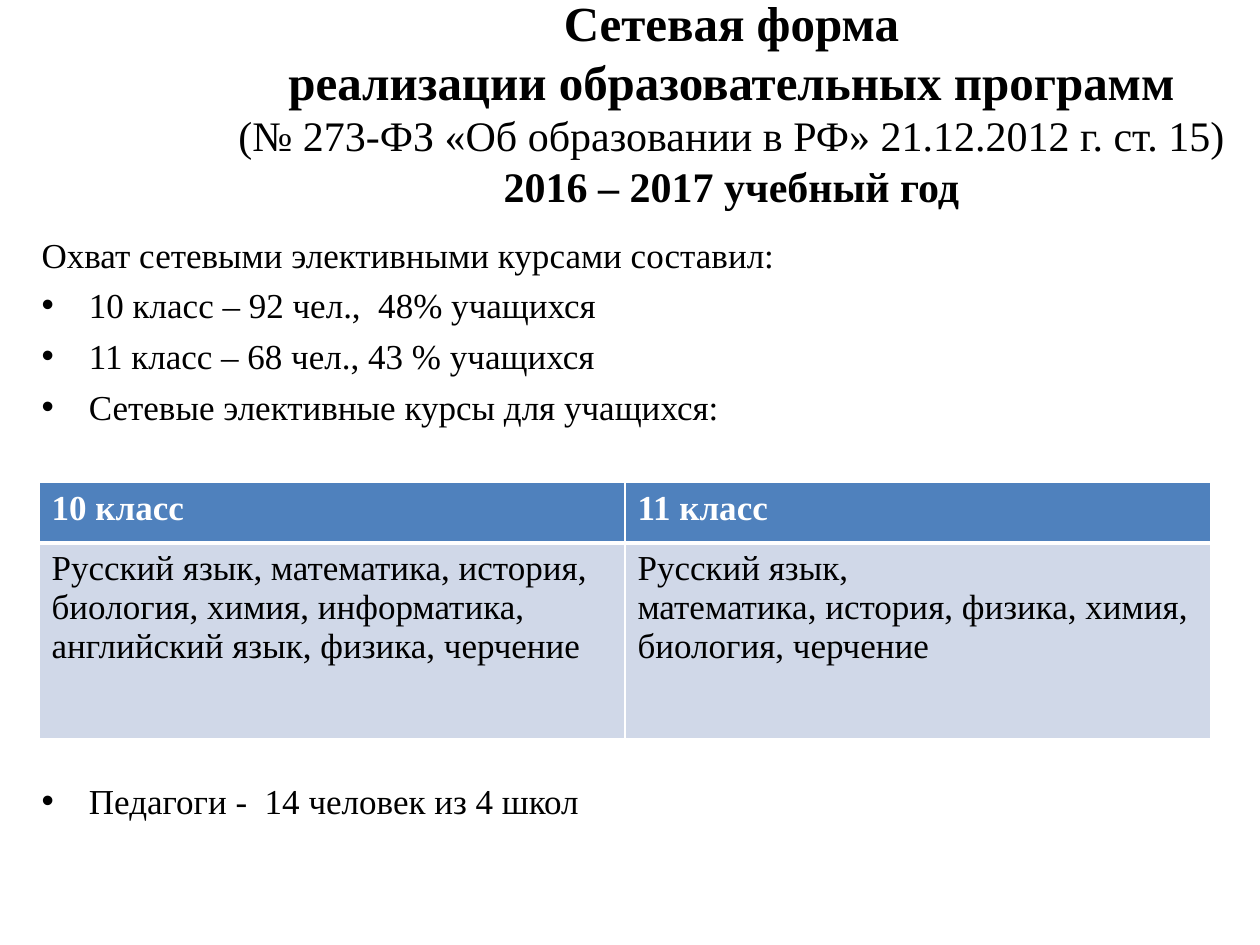
"""Build a slide on networked elective courses with a title, a list and a table."""
import lxml.etree
import pptx
import pptx.dml.color
import pptx.enum.text
import pptx.oxml.ns
import pptx.util

Inches = pptx.util.Inches
Pt = pptx.util.Pt
RGBColor = pptx.dml.color.RGBColor
qn = pptx.oxml.ns.qn

BLACK = RGBColor(0x00, 0x00, 0x00)
WHITE = RGBColor(0xFF, 0xFF, 0xFF)
HEADER_BLUE = RGBColor(0x4F, 0x81, 0xBD)
CELL_BLUE = RGBColor(0xD0, 0xD8, 0xE8)
FONT = "Times New Roman"

TITLE = [
    ("Сетевая форма", 28, True),
    ("реализации образовательных программ", 28, True),
    ("(№ 273-ФЗ «Об образовании в РФ» 21.12.2012 г. ст. 15)", 24, False),
    ("2016 – 2017 учебный год", 24, True),
]
BODY = [
    ("Охват сетевыми элективными курсами составил:", 0),
    ("10 класс – 92 чел.,  48% учащихся", 5),
    ("11 класс – 68 чел., 43 % учащихся", 5),
    ("Сетевые элективные курсы для учащихся:", 5),
    ("Педагоги -  14 человек из 4 школ", 201),
]
COURSES = [
    ["10 класс", "11 класс"],
    [
        "Русский язык, математика, история,\nбиология, химия, информатика,\n"
        "английский язык, физика, черчение",
        "Русский язык,\nматематика, история, физика, химия,\nбиология, черчение",
    ],
]


def place(s, left, top, width, height):
    """Move and size a shape, in inches."""
    s.left, s.top = Inches(left), Inches(top)
    s.width, s.height = Inches(width), Inches(height)


def format_runs(p, size, color=BLACK, bold=False):
    """Format every run of a paragraph."""
    for r in p.runs:
        r.font.name = FONT
        r.font.size = Pt(size)
        r.font.bold = bold
        r.font.color.rgb = color


def fill_title(s):
    """Write the centred title lines."""
    place(s, 1.61, 0.21, 8.39, 1.57)
    tf = s.text_frame
    tf.text = "\n".join(text for text, _, _ in TITLE)
    tf.auto_size = pptx.enum.text.MSO_AUTO_SIZE.NONE
    tf.vertical_anchor = pptx.enum.text.MSO_ANCHOR.MIDDLE
    tf.margin_bottom = Inches(0.43)
    for p, (_, size, bold) in zip(tf.paragraphs, TITLE):
        p.alignment = pptx.enum.text.PP_ALIGN.CENTER
        format_runs(p, size, bold=bold)


def fill_body(s):
    """Write the list, whose first line has no bullet."""
    place(s, 0.23, 1.8, 9.77, 4.95)
    tf = s.text_frame
    tf.text = "\n".join(text for text, _ in BODY)
    tf.auto_size = pptx.enum.text.MSO_AUTO_SIZE.NONE
    for p, (_, space) in zip(tf.paragraphs, BODY):
        p.space_before = Pt(space)
        format_runs(p, 20)
    pPr = tf.paragraphs[0]._p.get_or_add_pPr()
    lxml.etree.SubElement(pPr, qn("a:buNone"))


def add_borders(cell, widths):
    """Draw white cell borders of the given widths by side."""
    tcPr = cell._tc.get_or_add_tcPr()
    for side, width in widths.items():
        ln = lxml.etree.SubElement(tcPr, qn(f"a:ln{side}"), w=str(Pt(width)))
        fill = lxml.etree.SubElement(ln, qn("a:solidFill"))
        lxml.etree.SubElement(fill, qn("a:srgbClr"), val=str(WHITE))


def add_course_table(slide):
    """Add the table of courses by class."""
    table = slide.shapes.add_table(
        2, 2, Inches(0.31), Inches(3.83), Inches(9.3), Inches(2.03)
    ).table
    table.horz_banding = False
    for row, height in zip(table.rows, (0.48, 1.55)):
        row.height = Inches(height)
    for i, texts in enumerate(COURSES):
        header = i == 0
        for j, text in enumerate(texts):
            cell = table.cell(i, j)
            cell.text_frame.text = text
            for p in cell.text_frame.paragraphs:
                format_runs(p, 20, WHITE if header else BLACK, header)
            top, bottom = (1, 3) if header else (3, 1)
            add_borders(cell, {"L": 1, "R": 1, "T": top, "B": bottom})
            cell.fill.solid()
            cell.fill.fore_color.rgb = HEADER_BLUE if header else CELL_BLUE


def main():
    """Build and save the presentation."""
    prs = pptx.Presentation()
    prs.slide_width, prs.slide_height = Inches(10), Inches(7.5)
    slide = prs.slides.add_slide(prs.slide_layouts[1])
    fill_title(slide.shapes.title)
    fill_body(slide.placeholders[1])
    add_course_table(slide)
    prs.save("out.pptx")


if __name__ == "__main__":
    main()
